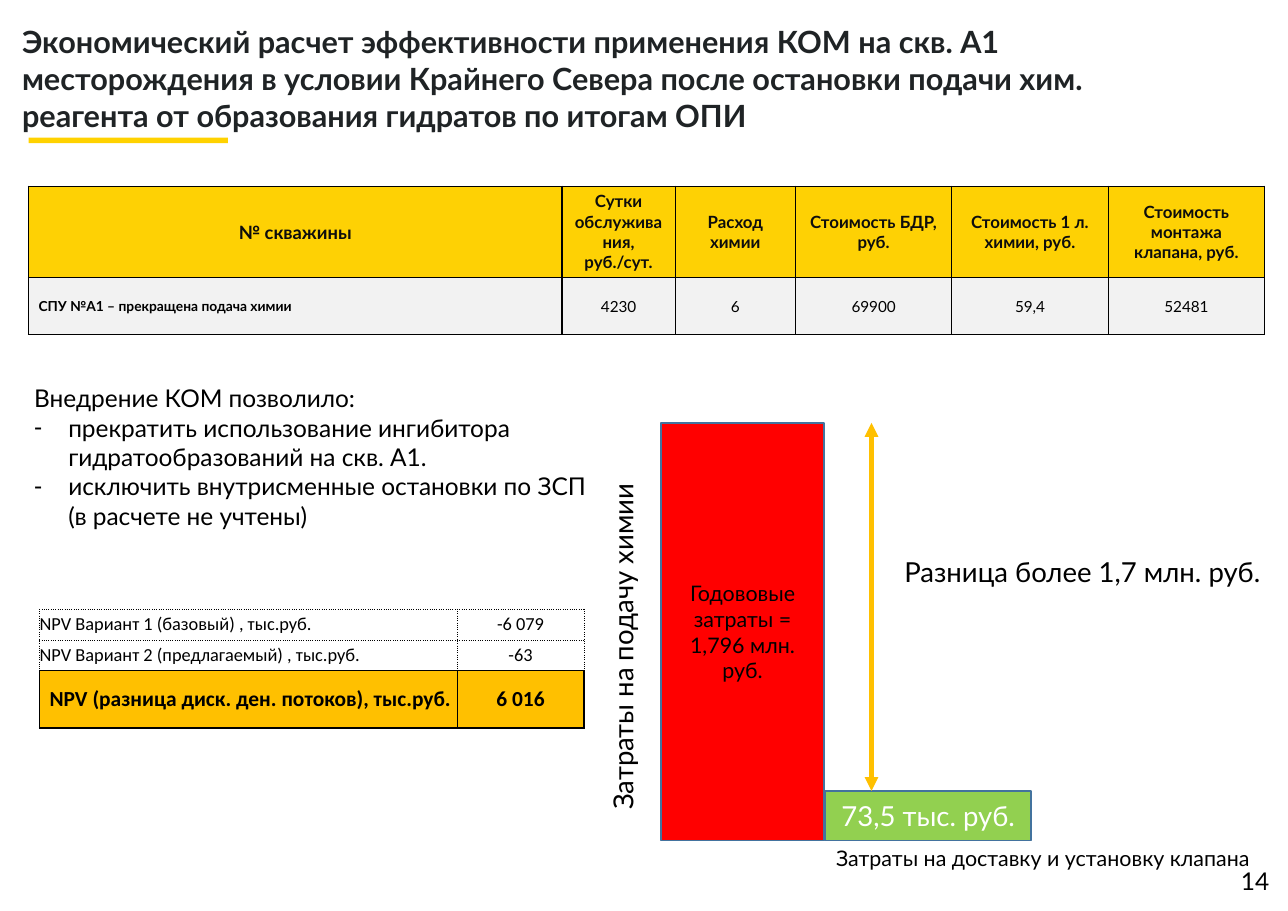
import pptx
import pptx.dml.color
import pptx.enum.shapes
import pptx.enum.text
import pptx.oxml
import pptx.oxml.ns
import pptx.util
from pptx.util import Inches

RGBColor = pptx.dml.color.RGBColor
BLACK = RGBColor(0, 0, 0)
WHITE = RGBColor(255, 255, 255)
INK = RGBColor(0x1F, 0x23, 0x25)
DARK = RGBColor(0x0D, 0x0D, 0x0D)
YELLOW = RGBColor(0xFE, 0xD1, 0x04)
GOLD = RGBColor(0xFF, 0xD2, 0x00)
AMBER = RGBColor(0xFF, 0xC0, 0x00)
PALE = RGBColor(0xF2, 0xF2, 0xF2)
RED = RGBColor(0xFF, 0, 0)
GREEN = RGBColor(0x92, 0xD0, 0x50)
EDGE = RGBColor(0x43, 0x73, 0x9E)

ALIGN = pptx.enum.text.PP_ALIGN
ANCHOR = pptx.enum.text.MSO_ANCHOR
FIT = pptx.enum.text.MSO_AUTO_SIZE
RECT = pptx.enum.shapes.MSO_SHAPE.RECTANGLE
SPACE = pptx.oxml.ns.nsdecls("a")
SOLID, DOTTED, THIN = (1, "solid"), (0.5, "dot"), (0.5, "solid")


def dress(item, form):
    for name, value in form.items():
        setattr(item, name, value)


def node(xml):
    return pptx.oxml.parse_xml(xml.replace(" ", f" {SPACE} ", 1))


def write(para, text, size, color=BLACK, align=ALIGN.LEFT, bold=False, name="Lato"):
    dress(para, {"alignment": align, "space_before": pptx.util.Pt(0)})
    run = para.add_run()
    run.text = text
    dress(run.font, {"size": pptx.util.Pt(size), "name": name, "bold": bold})
    run.font.color.rgb = color


def place(shape, left, top, width, height):
    dress(shape, {"left": Inches(left), "top": Inches(top),
                  "width": Inches(width), "height": Inches(height)})


def label(slide, box, text, size, turn=0):
    shape = slide.shapes.add_textbox(*map(Inches, box))
    shape.rotation = turn
    dress(shape.text_frame, {"word_wrap": False, "auto_size": FIT.SHAPE_TO_FIT_TEXT})
    write(shape.text_frame.paragraphs[0], text, size)


def block(slide, box, fill, edge=None):
    shape = slide.shapes.add_shape(RECT, *map(Inches, box))
    shape.shadow.inherit = False
    shape.fill.solid()
    shape.fill.fore_color.rgb = fill
    if edge:
        shape.line.color.rgb = edge
        shape.line.width = pptx.util.Pt(1)
    else:
        shape.line.fill.background()
    return shape


def bar(slide, box, fill, text, size, color):
    frame = block(slide, box, fill, EDGE).text_frame
    dress(frame, {"word_wrap": True, "vertical_anchor": ANCHOR.MIDDLE})
    write(frame.paragraphs[0], text, size, color, ALIGN.CENTER)


def grid(slide, left, top, cols, rows):
    frame = slide.shapes.add_table(len(rows), len(cols), Inches(left), Inches(top),
                                   Inches(sum(cols)), Inches(sum(rows)))
    table = frame.table
    dress(table, {"first_row": False, "horz_banding": False})
    for col, width in zip(table.columns, cols):
        col.width = Inches(width)
    for row, height in zip(table.rows, rows):
        row.height = Inches(height)
    return table


def cell_style(cell, sides, fill, pads):
    props = cell._tc.get_or_add_tcPr()
    for side, (width, dash) in zip("LRTB", sides):
        props.append(node(f'<a:ln{side} w="{int(width * 12700)}">'
                          f'<a:solidFill><a:srgbClr val="{BLACK}"/></a:solidFill>'
                          f'<a:prstDash val="{dash}"/></a:ln{side}>'))
    if fill:
        cell.fill.solid()
        cell.fill.fore_color.rgb = fill
    else:
        cell.fill.background()
    names = ("margin_left", "margin_top", "margin_right", "margin_bottom")
    dress(cell, dict(zip(names, map(Inches, pads))))
    cell.vertical_anchor = ANCHOR.MIDDLE


def head(slide, left, top):
    title = slide.shapes.title
    place(title, left, top, 10.44, 1.11)
    dress(title.text_frame, {"word_wrap": True, "auto_size": FIT.NONE,
                             "vertical_anchor": ANCHOR.TOP})
    write(title.text_frame.paragraphs[0],
          "Экономический расчет эффективности применения КОМ на скв. А1 "
          "месторождения в условии Крайнего Севера после остановки подачи хим. "
          "реагента от образования гидратов по итогам ОПИ", 20, INK, bold=True)
    block(slide, (left + 0.16, top + 1.09, 1.81, 0.05), GOLD)


def costs(slide, left, top):
    data = [
        ("№ скважины", "Сутки обслуживания, руб./сут.", "Расход химии",
         "Стоимость БДР, руб.", "Стоимость 1 л. химии, руб.",
         "Стоимость монтажа клапана, руб."),
        ("СПУ №А1 – прекращена подача химии", "4230", "6", "69900", "59,4", "52481"),
    ]
    looks = [(12, 11, DARK, YELLOW), (9, 10, BLACK, PALE)]
    table = grid(slide, left, top, (4.84, 1.03, 1.09, 1.42, 1.42, 1.42), (0.83, 0.52))
    for r, (row, (first, rest, color, fill)) in enumerate(zip(data, looks)):
        for c, text in enumerate(row):
            cell = table.cell(r, c)
            cell_style(cell, [SOLID] * 4, fill, (0.09, 0.04, 0.09, 0.04))
            write(cell.text_frame.paragraphs[0], text, rest if c else first, color,
                  ALIGN.LEFT if r and not c else ALIGN.CENTER, r == 0 or c == 0)


def gains(slide, left, top):
    body = slide.placeholders[1]
    place(body, left, top, 5.24, 1.99)
    frame = body.text_frame
    dress(frame, {"word_wrap": True, "auto_size": FIT.NONE, "vertical_anchor": ANCHOR.TOP})
    lines = ("Внедрение КОМ позволило:",
             "прекратить использование ингибитора гидратообразований на скв. А1.",
             "исключить внутрисменные остановки по ЗСП (в расчете не учтены)")
    for i, text in enumerate(lines):
        para = frame.add_paragraph() if i else frame.paragraphs[0]
        props = para._p.get_or_add_pPr()
        inset = Inches(0.31) if i else 0
        props.set("marL", str(inset))
        props.set("indent", str(-inset))
        props.append(node('<a:buChar char="-"/>' if i else "<a:buNone />"))
        write(para, text, 16)


def profit(slide, left, top):
    data = [("NPV Вариант 1 (базовый) , тыс.руб.", "-6 079"),
            ("NPV Вариант 2 (предлагаемый) , тыс.руб.", "-63"),
            ("NPV (разница диск. ден. потоков), тыс.руб.", "6 016")]
    table = grid(slide, left, top, (3.79, 1.15), (0.28, 0.28, 0.52))
    for r, row in enumerate(data):
        total = r == 2
        for c, text in enumerate(row):
            cell = table.cell(r, c)
            if total:
                sides = [THIN if c else SOLID, SOLID if c else THIN, SOLID, SOLID]
            else:
                sides = [DOTTED] * 3 + [SOLID if r else DOTTED]
            pad = 0.09 if total and not c else 0
            cell_style(cell, sides, AMBER if total else None, (pad, 0, 0, 0))
            write(cell.text_frame.paragraphs[0], text, 14 if total else 12, BLACK,
                  ALIGN.CENTER if c else ALIGN.LEFT, total, "Calibri")


def graph(slide, left, top):
    tall, low = 3.79, 0.45
    step, base = left + 1.49, top + tall
    bar(slide, (left, top, 1.48, tall), RED,
        "Годововые затраты = 1,796 млн. руб.", 14, BLACK)
    bar(slide, (step, base - low, 1.87, low), GREEN, "73,5 тыс. руб.", 18, WHITE)
    label(slide, (left - 1.96, top + 1.8, 3.22, 0.4), "Затраты на подачу химии", 18, 270)
    label(slide, (step, base - 0.01, 4.06, 0.34),
          "Затраты на доставку и установку клапана", 14)
    label(slide, (left + 2.11, top + 1.15, 3.55, 0.4), "Разница более 1,7 млн. руб.", 18)
    mid = Inches(left + 1.91)
    arrow = slide.shapes.add_connector(pptx.enum.shapes.MSO_CONNECTOR.STRAIGHT,
                                       mid, Inches(top), mid, Inches(base - low))
    arrow.line.color.rgb = AMBER
    arrow.line.width = pptx.util.Pt(3)
    for end in ("head", "tail"):
        arrow.get_or_add_ln().append(node(f'<a:{end}End type="triangle"/>'))
    arrow.element.spPr.append(node("<a:effectLst />"))


def foot(slide, left, top):
    frame = slide.shapes.add_textbox(*map(Inches, (left, top, 3.67, 0.4))).text_frame
    dress(frame, {"word_wrap": True, "margin_left": 0, "margin_top": 0,
                  "margin_right": 0, "margin_bottom": 0})
    write(frame.paragraphs[0], "14", 16, align=ALIGN.RIGHT)


def main():
    deck = pptx.Presentation()
    dress(deck, {"slide_width": Inches(11.69), "slide_height": Inches(8.27)})
    slide = deck.slides.add_slide(deck.slide_layouts[1])
    head(slide, 0.1, 0.16)
    costs(slide, 0.26, 1.69)
    gains(slide, 0.21, 3.43)
    profit(slide, 0.36, 5.53)
    graph(slide, 6, 3.84)
    foot(slide, 7.85, 7.86)
    deck.save("out.pptx")


if __name__ == "__main__":
    main()
